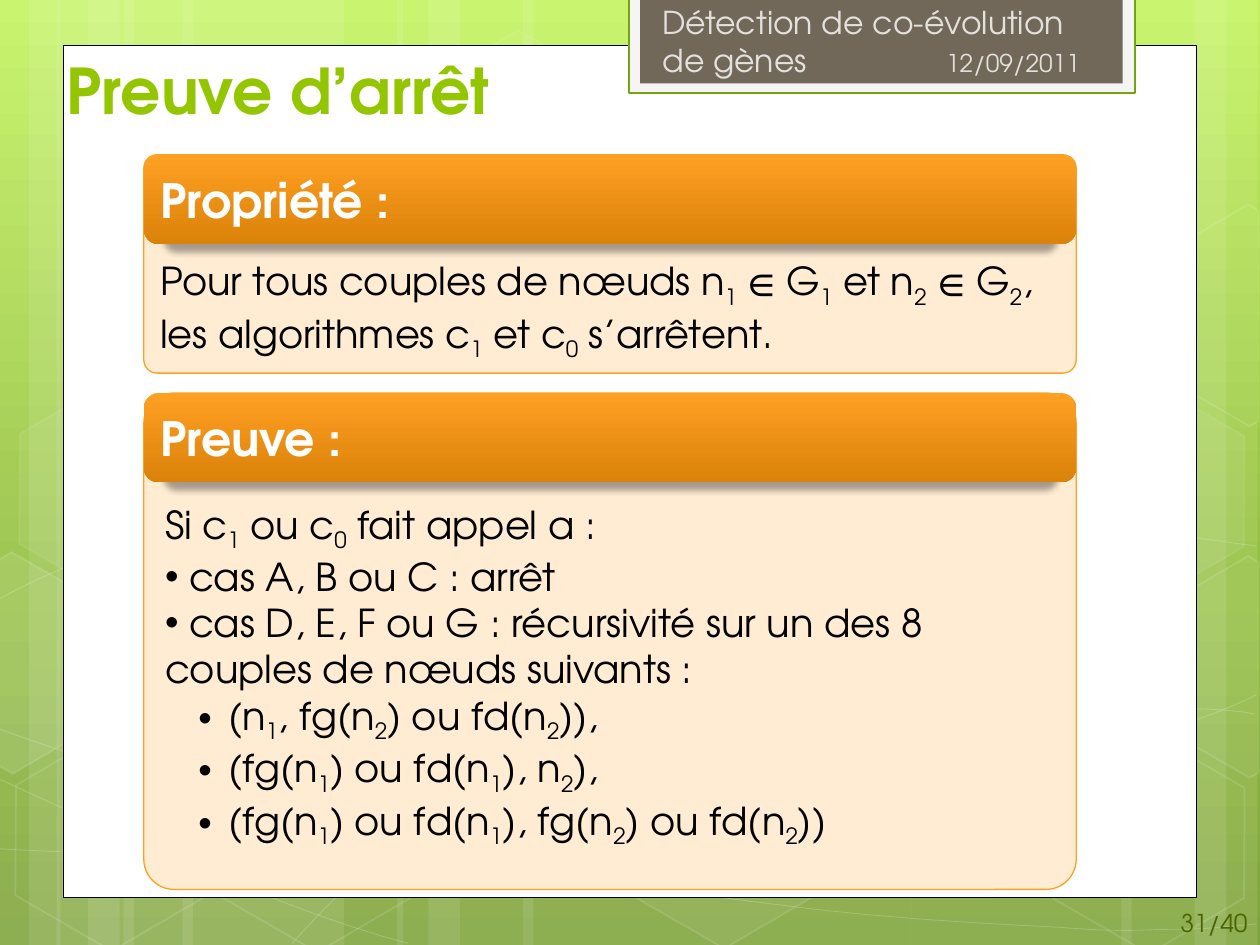
"""Build the slide "Preuve d'arrêt": two titled boxes on a green striped background."""
import copy
import math

import lxml.etree
import pptx
import pptx.dml.color
import pptx.enum.shapes
import pptx.enum.text
import pptx.oxml.ns
import pptx.util

Pt = pptx.util.Pt
RGB = pptx.dml.color.RGBColor.from_string
qn = pptx.oxml.ns.qn
SHAPE = pptx.enum.shapes.MSO_SHAPE
ALIGN = pptx.enum.text.PP_ALIGN
ANCHOR = pptx.enum.text.MSO_ANCHOR

THEME = {
    "font": "TeX Gyre Adventor", "bullet_font": "Arial",
    "white": "FFFFFF", "black": "000000", "title": "94C600", "number": "4A6300",
    "banner": "71685A", "banner_text": "E4E1DD", "frame": "F5F5F5", "frame_line": "74A510",
    "box": "FFECD3", "box_line": "FEA022",
    "header": ("FEA022", "DB820A"), "sky": ("C3F35F", "93BF3F", "81A53E"),
    "title_size": 36, "header_size": 27, "body_size": 22, "banner_size": 18, "small_size": 14,
}


def paint(sp, fill=None, line=None, width=1, fill_alpha=100, line_alpha=100):
    """Set fill, outline and opacity of a shape, without shadow."""
    sp.shadow.inherit = False
    for part, color in ((sp.fill, fill), (sp.line.fill, line)):
        if color is None:
            part.background()
        elif isinstance(color, tuple):
            part.gradient()
            part.gradient_angle = 270
            for stop, shade in zip(part.gradient_stops, color):
                stop.color.rgb = RGB(shade)
        else:
            part.solid()
            part.fore_color.rgb = RGB(color)
    if line:
        sp.line.width = Pt(width)
    for place, alpha in (("a:solidFill", fill_alpha), ("a:ln/a:solidFill", line_alpha)):
        for clr in sp.element.xpath(f"./p:spPr/{place}/a:srgbClr"):
            if alpha < 100:
                lxml.etree.SubElement(clr, qn("a:alpha"), val=str(alpha * 1000))
    return sp


def write(sp, lines, size, color, bold=False, align=ALIGN.LEFT, frame=None):
    """Write lines of text; braces enclose subscripts, a leading • or - sets a bullet."""
    tf = sp.text_frame
    for name, value in {"word_wrap": True, "vertical_anchor": ANCHOR.TOP, **(frame or {})}.items():
        setattr(tf, name, value)
    for i, line in enumerate(lines):
        p = tf.paragraphs[0] if i == 0 else tf.add_paragraph()
        p.alignment = align
        if line[0] in "•-":
            pPr = p._p.get_or_add_pPr()
            if line[0] == "-":
                p.level = 1
                pPr.set("marL", str(Pt(36)))
                pPr.set("indent", str(-Pt(17)))
            lxml.etree.SubElement(pPr, qn("a:buFont"), typeface=THEME["bullet_font"])
            lxml.etree.SubElement(pPr, qn("a:buChar"), char="•")
            line = line[1:]
        for j, piece in enumerate(line.replace("}", "{").split("{")):
            if piece:
                r = p.add_run()
                r.text = piece
                for name, value in {"name": THEME["font"], "size": Pt(size), "bold": bold}.items():
                    setattr(r.font, name, value)
                r.font.color.rgb = RGB(color)
                if j % 2:
                    r.font._element.set("baseline", "-25000")
    return tf


prs = pptx.Presentation()
prs.slide_width, prs.slide_height = Pt(720), Pt(540)
s = prs.slides.add_slide(prs.slide_layouts[6])

sky = s.background.fill
sky.gradient()
sky.gradient_angle = 270
stops = s.element.xpath(".//p:bg//a:gsLst")[0]
stops.append(copy.deepcopy(stops[-1]))
for stop, color, position in zip(sky.gradient_stops, THEME["sky"], (0, 0.62, 1)):
    stop.color.rgb = RGB(color)
    stop.position = position

STRIPES = [(70.6, 126), (-1.4, 36), (16.6, 60), (104.4, 126), (32.4, 36), (50.4, 60),
           (520.6, 126), (682.6, 36), (640.8, 60), (298.8, 222), (226.8, 36), (244.8, 60)]
for left, width in STRIPES:
    sp = s.shapes.add_shape(SHAPE.RECTANGLE, Pt(left), 0, Pt(width), Pt(540))
    paint(sp, THEME["white"], fill_alpha=10)

CURVES = [
    [(-2, 485), (37, 487), (76, 489), (130, 488), (184, 487), (251, 486), (323, 479),
     (395, 472), (497, 458), (563, 444), (629, 431), (696, 409), (718, 397)],
    [(-2, 343), (19, 332), (40, 321), (80, 310), (121, 300), (179, 284), (243, 279),
     (307, 274), (384, 273), (464, 279), (543, 284), (675, 307), (718, 312)],
    [(-3, 444), (84, 484), (171, 523), (233, 539)],
    [(-2, 416), (20, 424), (43, 432), (85, 444), (127, 454), (189, 472), (250, 485),
     (310, 497), (385, 510), (445, 517), (505, 525), (569, 528), (607, 530),
     (644, 533), (654, 531), (673, 531), (692, 531), (705, 529), (718, 528)],
    [(167, 539), (180, 525), (193, 510), (210, 498), (228, 485), (252, 470), (272, 460),
     (292, 450), (305, 446), (330, 438), (357, 431), (405, 421), (431, 416),
     (456, 411), (460, 411), (482, 410), (505, 408), (540, 405), (564, 405),
     (590, 404), (631, 405), (631, 405), (647, 405), (663, 405), (679, 405),
     (692, 405), (704, 406), (711, 407), (717, 408), (715, 408), (717, 408)],
]
for knots in CURVES:
    points = [(Pt(x), Pt(y)) for x, y in knots]
    builder = s.shapes.build_freeform(*points[0])
    builder.add_line_segments(points[1:], close=False)
    sp = paint(builder.convert_to_shape(), None, THEME["white"], 0.5, line_alpha=20)
    segments = sp.element.xpath(".//a:lnTo")
    for k in range(0, len(segments), 3):
        curve = lxml.etree.Element(qn("a:cubicBezTo"))
        segments[k].addprevious(curve)
        for segment in segments[k:k + 3]:
            curve.append(segment[0])
            segment.getparent().remove(segment)

EDGE = [(659.5, 349.2), (713.5, 317.5), (719.3, 321.1), (719.3, 441.4), (714.2, 444.2), (659.5, 412.6)]
CUT_HEXAGONS = [
    ([(-1.4, 320.4), (6.5, 315.4), (61.9, 347), (61.2, 410.4), (7.2, 442.1), (-1.4, 437)],
     (18.7, 385.2), "white", 10),
    (EDGE, (702, 374.4), "white", 4),
    ([(x, y - 200.9) for x, y in EDGE], (702, 173.5), None, 100),
]
cos, sin = math.cos(math.radians(30)), math.sin(math.radians(30))
for corners, (cx, cy), fill, alpha in CUT_HEXAGONS:
    points = [(Pt(cx + (x - cx) * cos + (y - cy) * sin), Pt(cy - (x - cx) * sin + (y - cy) * cos))
              for x, y in corners]
    builder = s.shapes.build_freeform(*points[0])
    builder.add_line_segments(points[1:], close=True)
    sp = paint(builder.convert_to_shape(), THEME.get(fill), THEME["white"], 1, alpha, 12)
    sp.rotation = 30

HEXAGONS = [(233.3, 25.9, 4, 8), (350.6, 424.1, 6, 12), (0.7, 425.5, 0, 12), (2.9, 224.6, 7, 8),
            (118.1, 426.2, 0, 12), (593.3, 427, 0, 12), (593.3, 226.1, 7, 8)]
for left, top, alpha, line_alpha in HEXAGONS:
    sp = s.shapes.add_shape(SHAPE.HEXAGON, Pt(left), Pt(top), Pt(126), Pt(109.4))
    sp.adjustments[0], sp.adjustments[1] = 0.285, 1.155
    sp.rotation = 30
    paint(sp, THEME["white"] if alpha else None, THEME["white"], 1, alpha, line_alpha)

PANELS = [((36, 25.9, 648, 486.7), "white", "black", 0.5),
          ((359.3, -1.4, 289.4, 54.7), "frame", "frame_line", 1.25),
          ((365.8, -1.4, 275.8, 49), "banner", None, 0)]
for place, fill, line, width in PANELS:
    sp = s.shapes.add_shape(SHAPE.RECTANGLE, *map(Pt, place))
    paint(sp, THEME[fill], THEME.get(line), width)

banner = s.shapes.add_textbox(Pt(371.5), Pt(-1.8), Pt(267.8), Pt(51.1))
tf = write(banner, ["Détection de co-évolution de gènes\t{12/09/2011}"], THEME["banner_size"], THEME["banner_text"])
p = tf.paragraphs[0]
date = p.runs[1]
date.font.size = Pt(THEME["small_size"])
date.font._element.set("baseline", "0")
tabs = lxml.etree.SubElement(p._p.get_or_add_pPr(), qn("a:tabLst"))
lxml.etree.SubElement(tabs, qn("a:tab"), pos=str(Pt(162)), algn="l")

number = s.shapes.add_textbox(Pt(648.7), Pt(515.5), Pt(71.3), Pt(24.5))
write(number, ["31/40"], THEME["small_size"], THEME["number"], align=ALIGN.RIGHT)
title = s.shapes.add_textbox(Pt(31), Pt(25.9), Pt(335.5), Pt(124.6))
write(title, ["Preuve d’arrêt"], THEME["title_size"], THEME["title"], bold=True)

BOXES = [
    (88.4, 124.8, "Propriété :", [
        "Pour tous couples de nœuds n{1} ∈ G{1} et n{2} ∈ G{2}, les algorithmes c{1} et c{0} s’arrêtent."]),
    (224.6, 283.7, "Preuve :", [
        "Si c{1} ou c{0} fait appel a :",
        "• cas A, B ou C : arrêt",
        "• cas D, E, F ou G : récursivité sur un des 8 couples de nœuds suivants :",
        "-(n{1}, fg(n{2}) ou fd(n{2})),",
        "-(fg(n{1}) ou fd(n{1}), n{2}),",
        "-(fg(n{1}) ou fd(n{1}), fg(n{2}) ou fd(n{2}))"]),
]
for top, height, heading, lines in BOXES:
    box = s.shapes.add_shape(SHAPE.ROUNDED_RECTANGLE, Pt(82.2), Pt(top), Pt(532.8), Pt(height))
    box.adjustments[0] = 0.061
    paint(box, THEME["box"], THEME["box_line"], 0.75)
    write(box, lines, THEME["body_size"], THEME["black"], frame={"margin_top": Pt(56.4)})
    header = s.shapes.add_shape(SHAPE.ROUNDED_RECTANGLE, Pt(82.2), Pt(top), Pt(532.8), Pt(51))
    paint(header, THEME["header"])
    write(header, [heading], THEME["header_size"], THEME["white"], True, frame={"vertical_anchor": ANCHOR.MIDDLE})
    effects = header.element.xpath("./p:spPr/a:effectLst")[0]
    shadow = lxml.etree.SubElement(effects, qn("a:outerShdw"), blurRad=str(Pt(3.5)), dist=str(Pt(4)),
                                   dir="5400000", sx="96000", rotWithShape="0")
    clr = lxml.etree.SubElement(shadow, qn("a:srgbClr"), val=THEME["black"])
    lxml.etree.SubElement(clr, qn("a:alpha"), val="34000")

prs.save("out.pptx")
